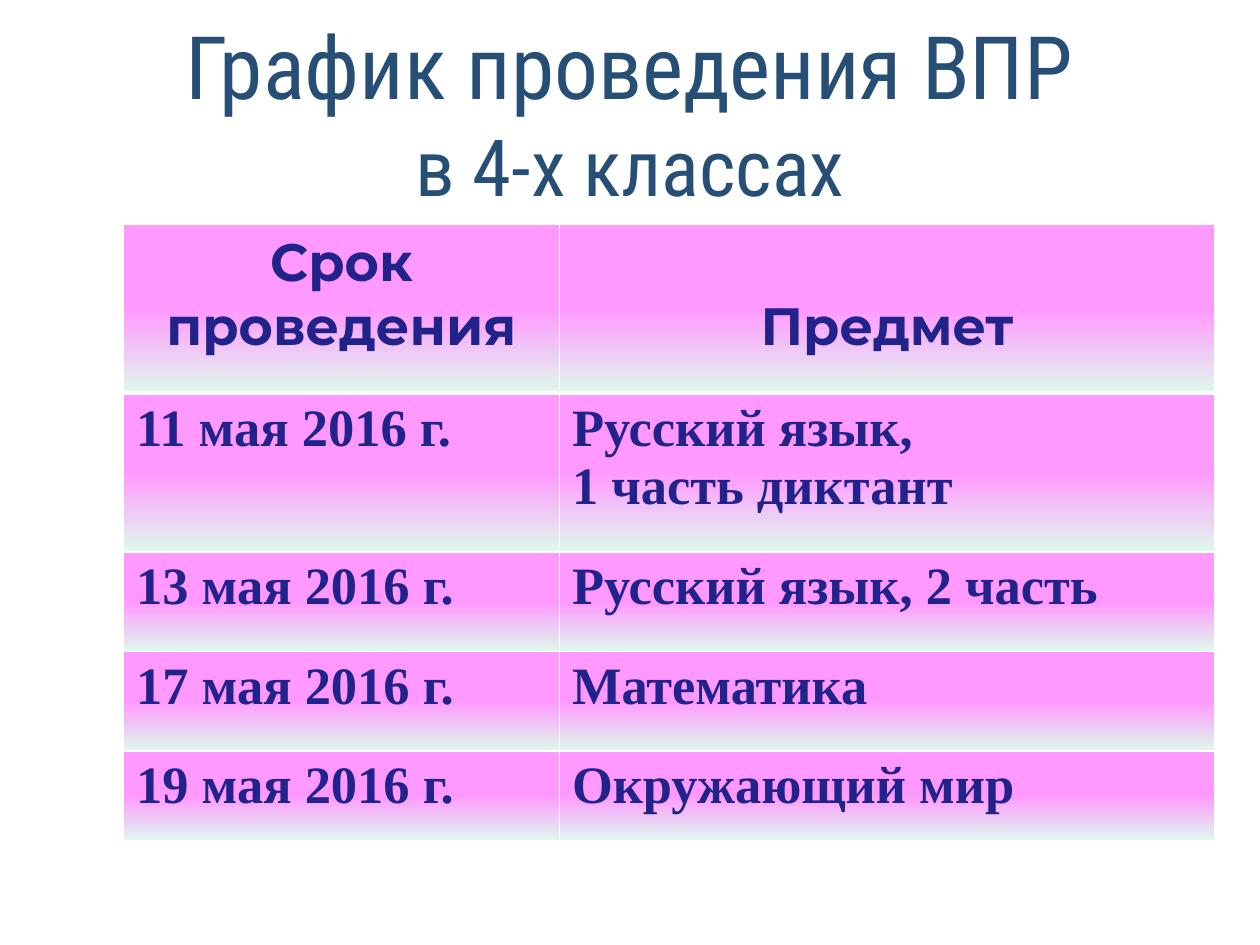
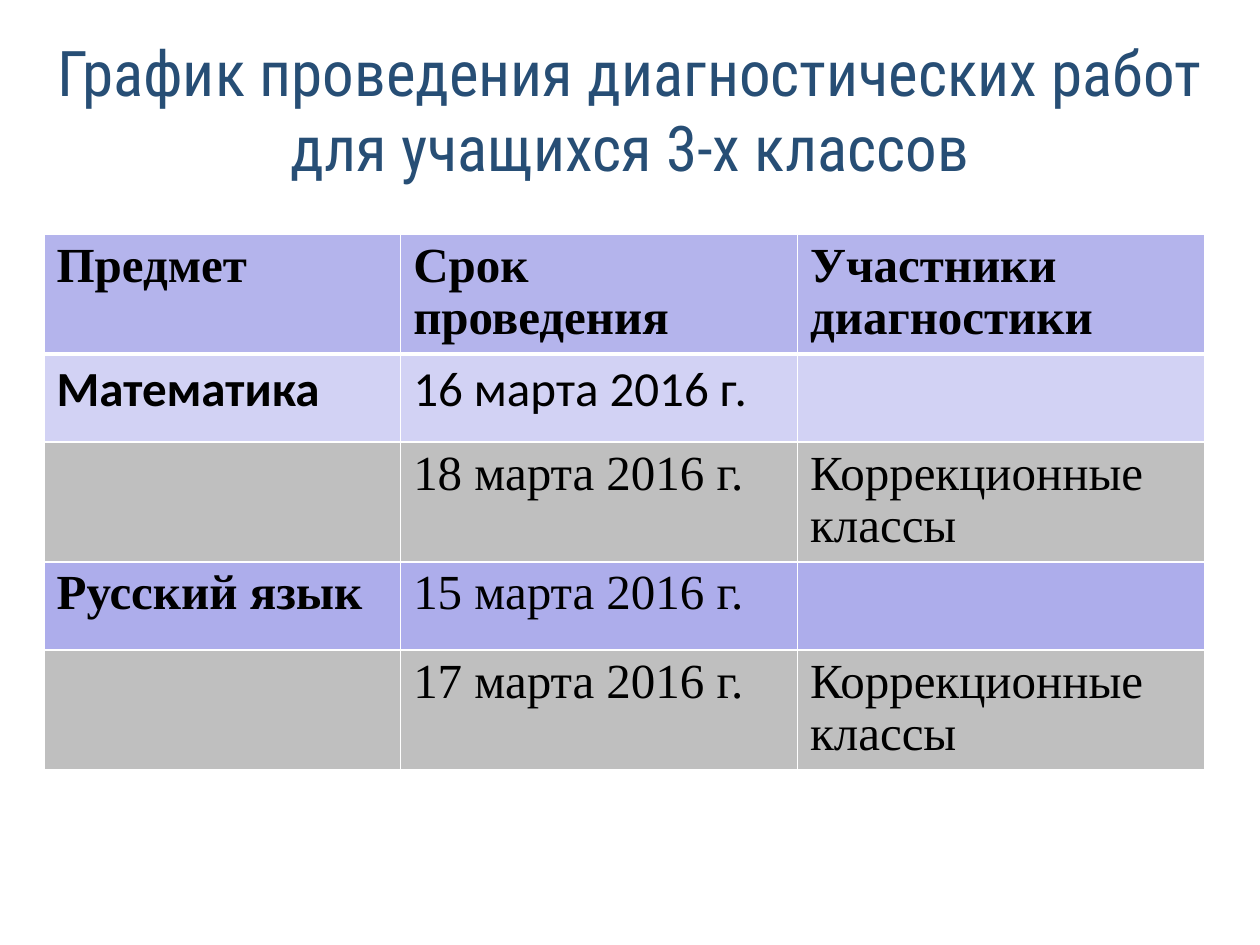
import pptx
import pptx.util
import pptx.dml.color
import pptx.enum.text
import pptx.oxml
import pptx.oxml.ns
from dataclasses import dataclass

Inches = pptx.util.Inches
Pt = pptx.util.Pt


@dataclass(frozen=True)
class Theme:
    title_font: str = "Roboto Condensed"
    header_font: str = "Montserrat"
    serif: str = "Times New Roman"
    sans: str = "Calibri"
    title: str = "274E75"
    navy: str = "22228B"
    black: str = "000000"
    white: str = "FFFFFF"
    gradient: tuple = ((0.5, "FF99FF"), (1, "DEF9EC"))
    violet: str = "8585E0"
    violet_alpha: int = 61
    lilac: str = "D2D2F4"
    lavender: str = "ADADEB"
    grey: str = "BFBFBF"
    border: int = 1
    header_border: int = 3
    exam_size: int = 30
    diagnostic_size: int = 28


THEME = Theme()
CENTER = pptx.enum.text.PP_ALIGN.CENTER

EXAM_TITLE = [("График проведения ВПР", 50), ("в 4-х классах", 45)]
EXAM_ROWS = [
    ["Срок проведения", "Предмет"],
    ["11 мая 2016 г.", "Русский язык,\n1 часть диктант"],
    ["13 мая 2016 г.", "Русский язык, 2 часть"],
    ["17 мая 2016 г.", "Математика"],
    ["19 мая 2016 г.", "Окружающий мир"],
]
DIAGNOSTIC_TITLE = [
    ("График проведения диагностических работ для учащихся 3-х классов", 36),
]
DIAGNOSTIC_ROWS = [
    ["Предмет", "Срок проведения", "Участники диагностики"],
    ["Математика", "16 марта 2016 г.", ""],
    ["", "18 марта 2016 г.", "Коррекционные классы"],
    ["Русский язык", "15 марта 2016 г.", ""],
    ["", "17 марта 2016 г.", "Коррекционные классы"],
]
DIAGNOSTIC_FILLS = [THEME.violet, THEME.lilac, THEME.grey, THEME.lavender, THEME.grey]


def rgb(color):
    return pptx.dml.color.RGBColor.from_string(color)


def style_run(run, font, size, color, bold=False):
    run.font.name = font
    run.font.size = Pt(size)
    run.font.color.rgb = rgb(color)
    run.font.bold = bold


def add_titled_slide(presentation, lines, top, height):
    slide = presentation.slides.add_slide(presentation.slide_layouts[5])
    title = slide.shapes.title
    title.left, title.top = Inches(0), Inches(top)
    title.width, title.height = presentation.slide_width, Inches(height)
    frame = title.text_frame
    frame.word_wrap = True
    frame.auto_size = pptx.enum.text.MSO_AUTO_SIZE.NONE
    frame.vertical_anchor = pptx.enum.text.MSO_ANCHOR.MIDDLE
    paragraph = frame.paragraphs[0]
    paragraph.alignment = CENTER
    for index, (text, size) in enumerate(lines):
        if index:
            paragraph.add_line_break()
        run = paragraph.add_run()
        run.text = text
        style_run(run, THEME.title_font, size, THEME.title)
    return slide


def add_grid(slide, rows, left, top, widths, heights):
    table = slide.shapes.add_table(
        len(rows), len(widths), Inches(left), Inches(top),
        Inches(sum(widths)), Inches(sum(heights))).table
    for column, width in zip(table.columns, widths):
        column.width = Inches(width)
    for row, height in zip(table.rows, heights):
        row.height = Inches(height)
    for row_index in range(len(rows)):
        for cell in table.rows[row_index].cells:
            top_width = THEME.header_border if row_index == 1 else THEME.border
            bottom_width = THEME.header_border if row_index == 0 else THEME.border
            set_borders(cell, top_width, bottom_width)
    return table


def set_borders(cell, top_width, bottom_width):
    properties = cell._tc.get_or_add_tcPr()
    widths = {"L": THEME.border, "R": THEME.border, "T": top_width, "B": bottom_width}
    for side, width in widths.items():
        properties.append(pptx.oxml.parse_xml(
            f'<a:ln{side} {pptx.oxml.ns.nsdecls("a")} w="{Pt(width)}">'
            f'<a:solidFill><a:srgbClr val="{THEME.white}"/></a:solidFill></a:ln{side}>'))


def fill_gradient(cell):
    cell.fill.gradient()
    cell.fill.gradient_angle = 270
    for stop, (position, color) in zip(cell.fill.gradient_stops, THEME.gradient):
        stop.position = position
        stop.color.rgb = rgb(color)


def fill_solid(cell, color, alpha=100):
    cell.fill.solid()
    cell.fill.fore_color.rgb = rgb(color)
    if alpha < 100:
        color_element = cell._tc.tcPr.find(".//" + pptx.oxml.ns.qn("a:solidFill") + "[last()]")
        color_element = cell._tc.tcPr.find(pptx.oxml.ns.qn("a:solidFill"))[0]
        color_element.append(pptx.oxml.parse_xml(
            f'<a:alpha {pptx.oxml.ns.nsdecls("a")} val="{alpha * 1000}"/>'))


def write_cell(cell, text, font, size, color, bold, alignment=None, spacing=None):
    frame = cell.text_frame
    for index, line in enumerate(text.split("\n")):
        paragraph = frame.add_paragraph() if index else frame.paragraphs[0]
        paragraph.alignment = alignment
        paragraph.line_spacing = spacing
        if line:
            run = paragraph.add_run()
            run.text = line
            style_run(run, font, size, color, bold)


def build_exam_slide(presentation):
    slide = add_titled_slide(presentation, EXAM_TITLE, 0, 1.78)
    table = add_grid(slide, EXAM_ROWS, 0.98, 1.78, [3.46, 5.2],
                     [1.34, 1.26, 0.79, 0.79, 0.71])
    for row_index, texts in enumerate(EXAM_ROWS):
        header = row_index == 0
        for column_index, text in enumerate(texts):
            cell = table.cell(row_index, column_index)
            fill_gradient(cell)
            write_cell(cell, text, THEME.header_font if header else THEME.serif,
                       THEME.exam_size, THEME.navy, True,
                       CENTER if header else None,
                       2.0 if header and column_index == 1 else None)


def build_diagnostic_slide(presentation):
    slide = add_titled_slide(presentation, DIAGNOSTIC_TITLE, 0.21, 1.31)
    table = add_grid(slide, DIAGNOSTIC_ROWS, 0.35, 1.86, [2.83, 3.15, 3.23],
                     [0.95, 0.7, 0.95, 0.7, 0.95])
    for row_index, (texts, color) in enumerate(zip(DIAGNOSTIC_ROWS, DIAGNOSTIC_FILLS)):
        for column_index, text in enumerate(texts):
            cell = table.cell(row_index, column_index)
            fill_solid(cell, color, THEME.violet_alpha if row_index == 0 else 100)
            write_cell(cell, text, THEME.sans if row_index == 1 else THEME.serif,
                       THEME.diagnostic_size, THEME.black,
                       row_index == 0 or column_index == 0, spacing=0.96)


def main():
    presentation = pptx.Presentation()
    presentation.slide_width = Inches(10)
    presentation.slide_height = Inches(7.5)
    build_exam_slide(presentation)
    build_diagnostic_slide(presentation)
    presentation.save("out.pptx")


if __name__ == "__main__":
    main()
